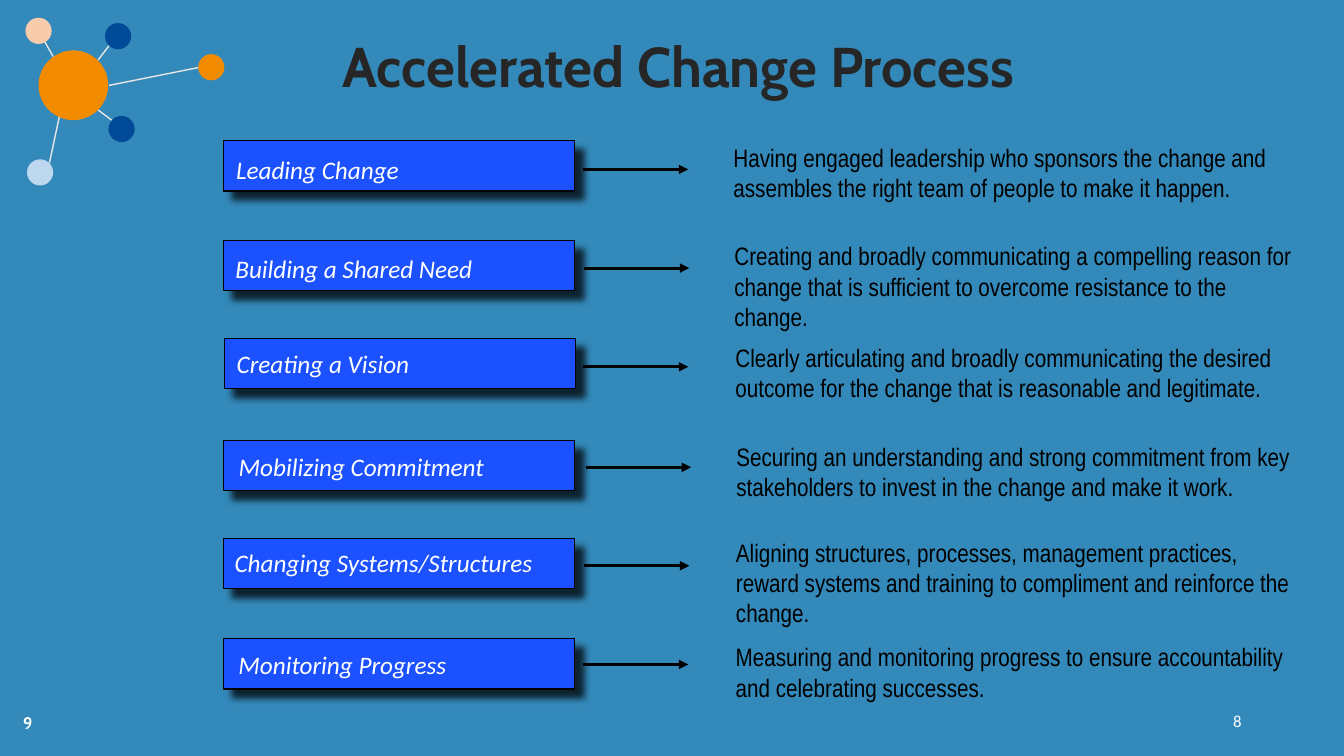
from lxml.etree import SubElement
from pptx import Presentation
from pptx.dml.color import RGBColor
from pptx.enum.shapes import MSO_CONNECTOR, MSO_SHAPE
from pptx.enum.text import MSO_ANCHOR, PP_ALIGN
from pptx.oxml.ns import qn
from pptx.util import Pt

BACKGROUND = RGBColor(0x33, 0x89, 0xBA)
BAR_BLUE = RGBColor(0x1B, 0x51, 0xFF)
BLACK = RGBColor(0x00, 0x00, 0x00)
WHITE = RGBColor(0xFF, 0xFF, 0xFF)
CHARCOAL = RGBColor(0x26, 0x26, 0x26)
PALE_GREY = RGBColor(0xE7, 0xE6, 0xE6)
ORANGE = RGBColor(0xF3, 0x8B, 0x00)
NAVY = RGBColor(0x00, 0x4A, 0x97)
PEACH = RGBColor(0xF8, 0xCB, 0xAD)
PALE_BLUE = RGBColor(0xBD, 0xD7, 0xEE)

SPOKES = [
    (31, 28, 38, 40.5),
    (70, 78.5, 80, 86),
    (78, 32.5, 70, 43),
    (142, 48.2, 78, 61),
    (35.3, 116.5, 52.5, 36),
]
NODES = [
    (141.6, 38.7, 18.7, ORANGE),
    (75, 16.5, 18.7, NAVY),
    (77.5, 82.8, 18.7, NAVY),
    (18.2, 12.7, 18.7, PEACH),
    (27.5, 36, 49.8, ORANGE),
    (19.3, 113.8, 18.7, PALE_BLUE),
]

STEPS = [
    ("Leading Change", (160, 100.5), (161.5, 106.6), (416.2, 121), (516.8, 98),
     "Having engaged leadership who sponsors the change and assembles "
     "the right team of people to make it happen."),
    ("Building a Shared Need", (160, 171.8), (161, 177.2), (417, 191.5), (517.5, 168.3),
     "Creating and broadly communicating a compelling reason for change "
     "that is sufficient to overcome resistance to the change."),
    ("Creating a Vision", (160.6, 241.7), (162, 245.5), (416.2, 262), (518.2, 241),
     "Clearly articulating and broadly communicating the desired outcome "
     "for the change that is reasonable and legitimate."),
    ("Mobilizing Commitment", (160, 314.6), (163.4, 319), (418.3, 333.8), (518.9, 311.8),
     "Securing an understanding and strong commitment from key "
     "stakeholders to invest in the change and make it work."),
    ("Changing Systems/Structures", (160, 384.6), (160.5, 387.4), (417, 404.1), (518.6, 379.9),
     "Aligning structures, processes, management practices, reward systems "
     "and training to compliment and reinforce the change."),
    ("Monitoring Progress", (160, 456.2), (163.2, 460), (416.2, 474.6), (518.4, 454.8),
     "Measuring and monitoring progress to ensure accountability and "
     "celebrating successes."),
]


class ProcessSlide:
    body_font = "Calibri"
    title_font = "Cabin"
    description_font = "Arial Narrow"

    def __init__(self, deck):
        self.slide = deck.slides.add_slide(deck.slide_layouts[6])
        self.slide.background.fill.solid()
        self.slide.background.fill.fore_color.rgb = BACKGROUND

    def solid(self, kind, left, top, width, height, color):
        solid = self.slide.shapes.add_shape(
            kind, Pt(left), Pt(top), Pt(width), Pt(height))
        solid.shadow.inherit = False
        solid.fill.solid()
        solid.fill.fore_color.rgb = color
        solid.line.fill.background()
        return solid

    def node(self, left, top, diameter, color):
        self.solid(MSO_SHAPE.OVAL, left, top, diameter, diameter, color)

    def bar(self, left, top, width, height):
        bar = self.solid(MSO_SHAPE.RECTANGLE, left, top, width, height, BAR_BLUE)
        bar.line.color.rgb = BLACK
        bar.line.width = Pt(0.75)
        effects = bar.element.spPr.find(qn("a:effectLst"))
        shadow = SubElement(
            effects, qn("a:outerShdw"), blurRad=str(Pt(5)), dist=str(Pt(8.5)),
            dir="2700000", algn="tl", rotWithShape="0")
        shade = SubElement(shadow, qn("a:srgbClr"), val=str(BLACK))
        SubElement(shade, qn("a:alpha"), val="75000")

    def line(self, x1, y1, x2, y2, color, weight, arrow=False):
        line = self.slide.shapes.add_connector(
            MSO_CONNECTOR.STRAIGHT, Pt(x1), Pt(y1), Pt(x2), Pt(y2))
        line.line.color.rgb = color
        line.line.width = Pt(weight)
        if arrow:
            SubElement(line.line._get_or_add_ln(), qn("a:tailEnd"), type="triangle")
        SubElement(line.element.spPr, qn("a:effectLst"))

    def text(self, words, left, top, width, height, size, color, font=body_font,
             bold=False, italic=False, align=PP_ALIGN.LEFT,
             anchor=MSO_ANCHOR.TOP, spacing=None):
        frame = self.slide.shapes.add_textbox(
            Pt(left), Pt(top), Pt(width), Pt(height)).text_frame
        frame.word_wrap = True
        frame.vertical_anchor = anchor
        paragraph = frame.paragraphs[0]
        paragraph.text = words
        paragraph.alignment = align
        paragraph.line_spacing = spacing
        paragraph.font.name = font
        paragraph.font.size = Pt(size)
        paragraph.font.bold = bold
        paragraph.font.italic = italic
        paragraph.font.color.rgb = color

    def page_number(self, words, left, top, width, **style):
        self.text(words, left, top, width, 28.8, 12, WHITE, align=PP_ALIGN.RIGHT,
                  anchor=MSO_ANCHOR.MIDDLE, **style)

    def step(self, name, bar_at, name_at, arrow_at, detail_at, detail):
        arrow_left, arrow_y = arrow_at
        self.bar(*bar_at, 250.5, 36)
        self.text(name, *name_at, 245, 29, 18, WHITE, italic=True)
        self.line(arrow_left, arrow_y, arrow_left + 75.4, arrow_y, BLACK, 2.25,
                  arrow=True)
        self.text(detail, *detail_at, 420, 51, 18, BLACK,
                  font=self.description_font)


def main():
    deck = Presentation()
    deck.slide_width, deck.slide_height = Pt(960), Pt(540)
    page = ProcessSlide(deck)

    for spoke in SPOKES:
        page.line(*spoke, PALE_GREY, 1)
    for node in NODES:
        page.node(*node)

    page.text("Accelerated Change Process", 213, 30.5, 543, 38, 40, CHARCOAL,
              font=page.title_font, bold=True, align=PP_ALIGN.CENTER,
              anchor=MSO_ANCHOR.MIDDLE, spacing=0.9)
    for step in STEPS:
        page.step(*step)

    page.page_number("9", 6.5, 501.8, 23.8, font=page.title_font, bold=True)
    page.page_number("8", 678, 500.4, 216)

    deck.save("out.pptx")


if __name__ == "__main__":
    main()
